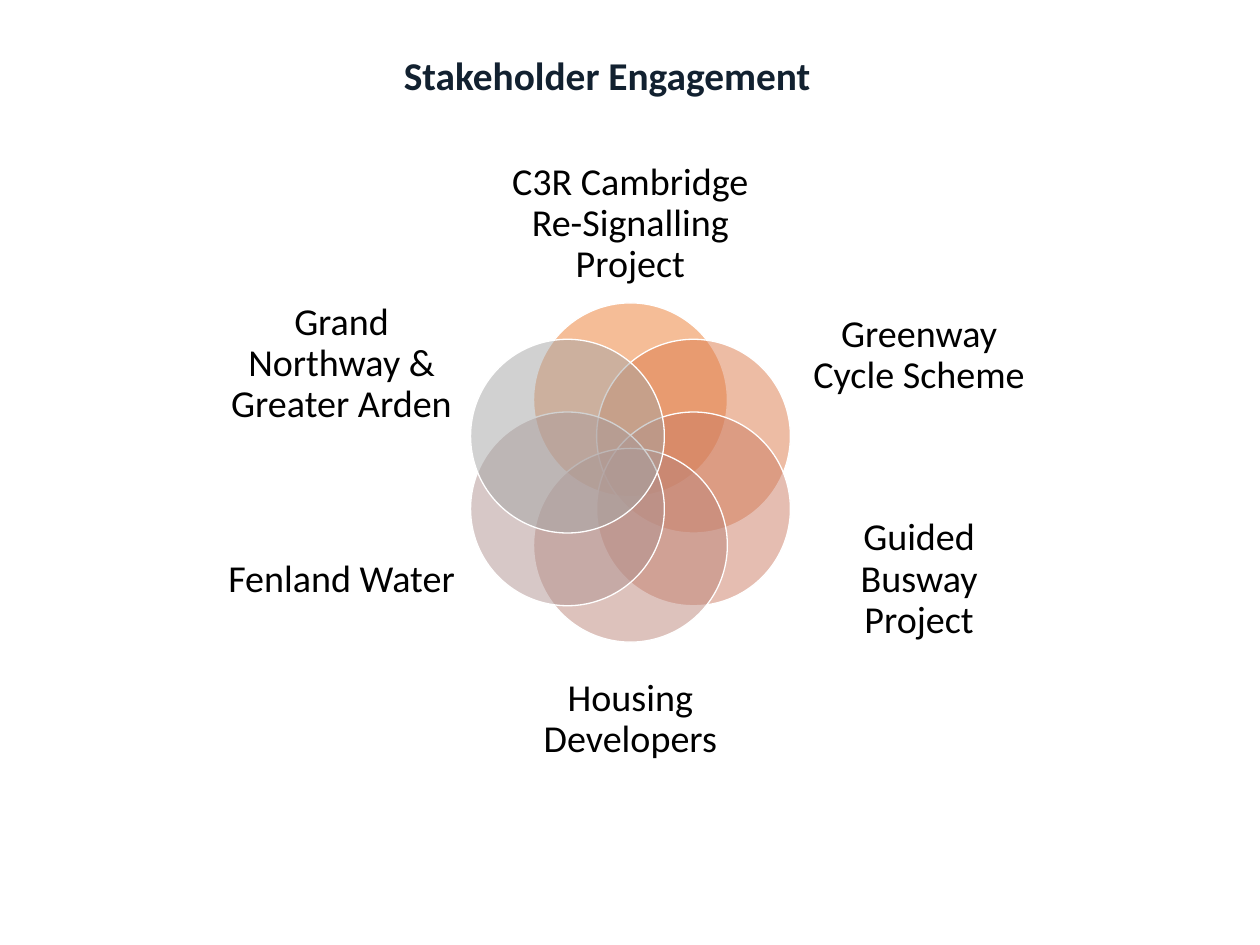
from math import cos, radians, sin

from lxml import etree
from pptx import Presentation
from pptx.dml.color import RGBColor
from pptx.enum.shapes import MSO_SHAPE
from pptx.enum.text import MSO_ANCHOR, PP_ALIGN
from pptx.oxml.ns import qn
from pptx.util import Inches, Pt

OVAL = MSO_SHAPE.OVAL
MIDDLE, TOP = MSO_ANCHOR.MIDDLE, MSO_ANCHOR.TOP
CENTER = PP_ALIGN.CENTER
WHITE = RGBColor(0xFF, 0xFF, 0xFF)
BLACK = RGBColor(0, 0, 0)
NAVY = RGBColor(0x12, 0x21, 0x30)

TITLE = "Stakeholder Engagement"
GROUPS = [
    ("C3R Cambridge Re-Signalling Project", RGBColor(0xED, 0x7D, 0x31), (5.39, 1.68, 2.56, 1.39)),
    ("Greenway Cycle Scheme", RGBColor(0xDC, 0x7A, 0x4B), (8.51, 3, 2.43, 1.53)),
    ("Guided Busway Project", RGBColor(0xCC, 0x7D, 0x64), (8.51, 5.28, 2.43, 1.71)),
    ("Housing Developers", RGBColor(0xBD, 0x86, 0x7B), (5.39, 6.92, 2.56, 1.39)),
    ("Fenland Water", RGBColor(0xB0, 0x93, 0x91), (2.4, 5.28, 2.43, 1.71)),
    ("Grand Northway & Greater Arden", RGBColor(0xA5, 0xA5, 0xA5), (2.4, 3, 2.43, 1.71)),
]
MID_X, MID_Y, RING, SIZE = 6.67, 5, 0.77, 2.05
TITLE_FONT = {"name": "Calibri", "size": Pt(30), "bold": True}
LABEL_FONT = {"name": "Calibri", "size": Pt(29), "bold": False}
NO_INSET = dict.fromkeys(("margin_left", "margin_top", "margin_right", "margin_bottom"), 0)


def apply(item, values):
    for key, value in values.items():
        setattr(item, key, value)


def add_text(shapes, text, box, font, color, frame):
    area = shapes.add_textbox(*map(Inches, box)).text_frame
    apply(area, {"word_wrap": True, **frame})
    para = area.paragraphs[0]
    apply(para, {"text": text, "alignment": CENTER, "line_spacing": 0.9})
    apply(para.runs[0].font, font)
    para.runs[0].font.color.rgb = color


def add_circle(shapes, angle, color):
    left = MID_X + RING * sin(angle) - SIZE / 2
    top = MID_Y - RING * cos(angle) - SIZE / 2
    disc = shapes.add_shape(OVAL, *map(Inches, (left, top, SIZE, SIZE)))
    disc.shadow.inherit = False
    disc.fill.solid()
    disc.fill.fore_color.rgb = color
    tint = disc.fill._xPr.find(qn("a:solidFill"))[0]
    etree.SubElement(tint, qn("a:alpha"), val="50000")
    disc.line.color.rgb = WHITE
    disc.line.width = Pt(1)


def main():
    deck = Presentation()
    deck.slide_width, deck.slide_height = Inches(13.33), Inches(10)
    slide = deck.slides.add_slide(deck.slide_layouts[6])
    add_text(slide.shapes, TITLE, (1.45, 0.55, 9.95, 0.91), TITLE_FONT, NAVY,
             {"vertical_anchor": TOP})
    venn = slide.shapes.add_group_shape().shapes
    for i, (name, color, box) in enumerate(GROUPS):
        add_circle(venn, radians(i * 360 / len(GROUPS)), color)
        add_text(venn, name, box, LABEL_FONT, BLACK,
                 {"vertical_anchor": MIDDLE, **NO_INSET})
    deck.save("out.pptx")


if __name__ == "__main__":
    main()
